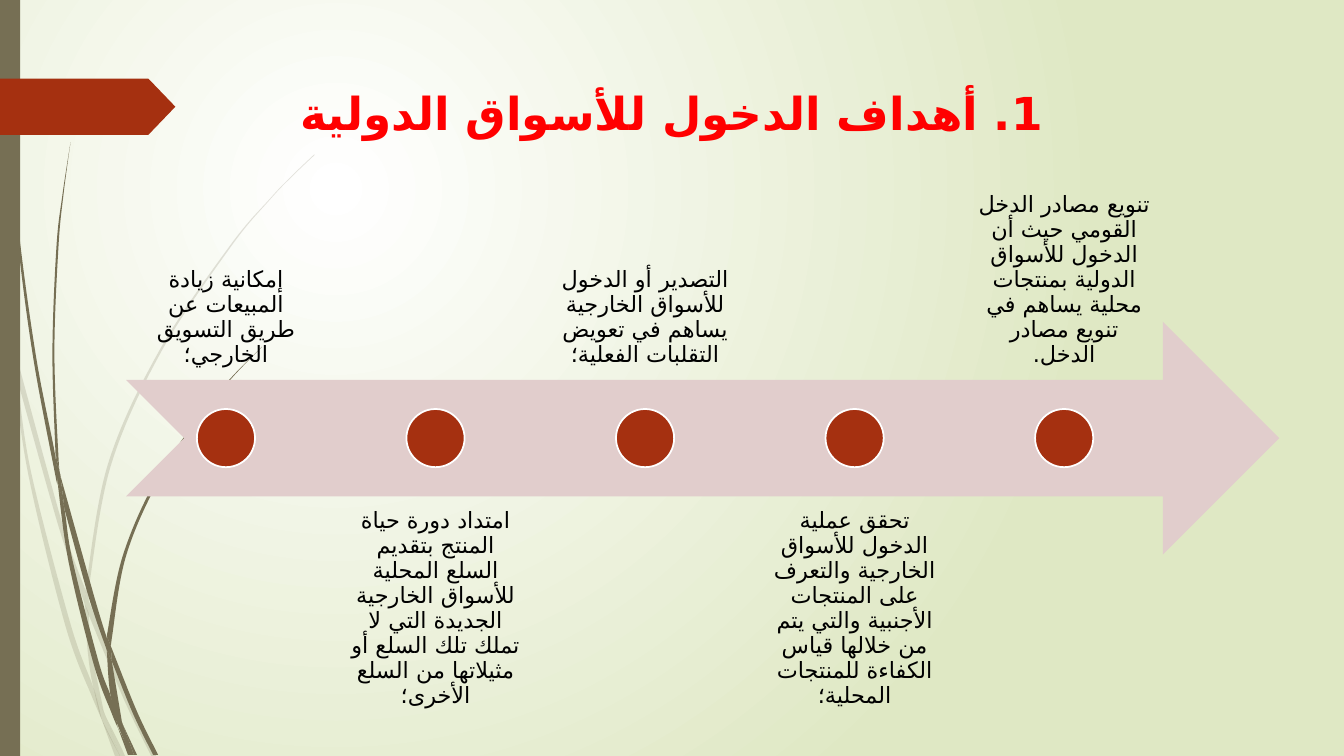
from lxml import etree
from pptx import Presentation
from pptx.dml.color import RGBColor
from pptx.enum.shapes import MSO_SHAPE as SHAPE
from pptx.enum.text import MSO_ANCHOR as ANCHOR, PP_ALIGN as ALIGN
from pptx.oxml.ns import qn
from pptx.util import Cm, Pt

OLIVE, RUST, PINK = "766F54", "A53010", "E1CDCC"
ARABIC_FONT = "DejaVu Sans"
STEM_UNIT = Cm(0.0254)

# Each stem is a closed outline of smooth edges, in stem units from the page corner.
PALE_STEMS = [
    [[(11, 350), (9, 322), (0, 282)], [(0, 299), (10, 344)]],
    [[(17, 376), (58, 522), (84, 599)], [(85, 586), (62, 520), (14, 345)]],
    [[(88, 596), (127, 692), (155, 750)], [(150, 750), (123, 694), (88, 610)]],
    [[(119, 750), (124, 750), (105, 711)]],
    [[(11, 350), (17, 376), (31, 469), (70, 619), (93, 683), (101, 714)],
     [(92, 693), (65, 621), (28, 470), (11, 350)]],
    [[(84, 599), (87, 646), (93, 683), (105, 711)], [(103, 706), (91, 646), (88, 608)]],
    [[(88, 584), (110, 462), (160, 349), (229, 245), (268, 198), (290, 175), (312, 154)],
     [(312, 153), (289, 175), (268, 197), (228, 244), (158, 348), (107, 461), (85, 584)],
     [(85, 586), (88, 596)]],
    [[(101, 714), (114, 750)], [(119, 750)]],
    [[(88, 610), (88, 596)], [(85, 586), (84, 599)]],
    [[(93, 683), (101, 714), (119, 750)], [(105, 711), (96, 692)]],
]
DARK_STEMS = [
    [[(3, 0), (4, 48), (7, 110), (17, 233), (33, 355), (56, 477)],
     [(57, 481), (55, 453), (36, 355), (19, 232), (8, 109), (5, 48), (4, 0)]],
    [[(64, 505), (88, 592), (106, 645)], [(106, 633), (93, 590), (60, 472)]],
    [[(110, 641), (136, 706), (157, 749)], [(152, 749), (132, 708), (111, 656)]],
    [[(57, 477), (64, 505), (72, 556), (98, 657), (110, 691), (116, 717)],
     [(117, 722), (111, 708), (93, 659), (68, 557), (57, 477)]],
    [[(70, 141), (63, 193), (58, 245), (54, 349), (58, 453), (60, 472)],
     [(55, 449), (52, 349), (56, 245), (62, 193), (70, 141)]],
    [[(122, 719), (133, 749)], [(136, 749)]],
    [[(57, 477), (64, 505)], [(60, 472), (55, 449)]],
    [[(111, 633), (125, 552), (158, 476), (205, 406), (231, 374), (260, 344)],
     [(260, 344), (231, 373), (204, 405), (156, 474), (122, 551), (106, 631)],
     [(110, 641)]],
    [[(117, 722), (127, 749)], [(131, 749)]],
    [[(106, 645), (110, 691), (122, 719)], [(121, 716), (111, 656)]],
    [[(106, 645), (111, 656)], [(110, 641), (106, 631)]],
    [[(110, 691), (116, 717), (130, 749)], [(133, 749), (122, 719), (116, 706)]],
]
GOALS = [
    "إمكانية زيادة المبيعات عن طريق التسويق الخارجي؛",
    "امتداد دورة حياة المنتج بتقديم السلع المحلية للأسواق الخارجية الجديدة "
    "التي لا تملك تلك السلع أو مثيلاتها من السلع الأخرى؛",
    "التصدير أو الدخول للأسواق الخارجية يساهم في تعويض التقلبات الفعلية؛",
    "تحقق عملية الدخول للأسواق الخارجية والتعرف على المنتجات الأجنبية "
    "والتي يتم من خلالها قياس الكفاءة للمنتجات المحلية؛",
    "تنويع مصادر الدخل القومي حيث أن الدخول للأسواق الدولية بمنتجات محلية "
    "يساهم في تنويع مصادر الدخل.",
]


def color(value):
    return RGBColor.from_string(value)


def paint(shape, fill, line=None, opacity=100):
    shape.shadow.inherit = False
    shape.fill.solid()
    shape.fill.fore_color.rgb = color(fill)
    if opacity < 100:
        tint = shape.fill._xPr.find(".//" + qn("a:srgbClr"))
        etree.SubElement(tint, qn("a:alpha"), val=str(opacity * 1000))
    if line:
        shape.line.color.rgb = color(line)
        shape.line.width = Pt(1.25)
    else:
        shape.line.fill.background()


def add_preset(page, kind, box, fill, line=None):
    shape = page.shapes.add_shape(kind, *(Cm(length) for length in box))
    paint(shape, fill, line)
    return shape


def add_rtl_text(page, box, text, size, ink, font, spacing, anchor=ANCHOR.TOP, inset=0.13):
    """Add a centred right-to-left paragraph in its own text box."""
    frame = page.shapes.add_textbox(*(Cm(length) for length in box)).text_frame
    frame.word_wrap = True
    frame.vertical_anchor = anchor
    frame.margin_left = frame.margin_right = Cm(inset)
    frame.margin_top = frame.margin_bottom = Cm(inset)
    para = frame.paragraphs[0]
    span = para.add_run()
    span.text = text
    para.alignment = ALIGN.CENTER
    para.line_spacing = spacing
    para._p.get_or_add_pPr().set("rtl", "1")
    span.font.size = Pt(size)
    span.font.name = font
    span.font.color.rgb = color(ink)
    etree.SubElement(span._r.get_or_add_rPr(), qn("a:cs"), typeface=ARABIC_FONT)
    return span


def curve_controls(edge):
    """Return the two Bezier controls of each segment of a smooth edge."""
    padded = [edge[0], *edge, edge[-1]]
    return [
        (tuple(b + (c - a) / 6 for a, b, c in zip(before, start, end)),
         tuple(c - (d - b) / 6 for b, c, d in zip(start, end, after)))
        for before, start, end, after in zip(padded, padded[1:], padded[2:], padded[3:])]


def add_stem(page, edges, opacity):
    points = [point for edge in edges for point in edge]
    left, top = (min(values) for values in zip(*points))
    builder = page.shapes.build_freeform(*points[0], scale=STEM_UNIT)
    builder.add_line_segments(points[1:], close=True)
    stem = builder.convert_to_shape()
    outline = stem._element.find(".//" + qn("a:path"))
    for attribute in ("w", "h"):
        outline.set(attribute, str(int(outline.get(attribute)) * 100))
    for spot in outline.iter(qn("a:pt")):
        for axis in ("x", "y"):
            spot.set(axis, str(int(spot.get(axis)) * 100))
    controls = []
    for edge in edges:
        controls += [None, *curve_controls(edge)]
    for line, pair in zip(outline.findall(qn("a:lnTo")), controls[1:]):
        if pair:
            line.tag = qn("a:cubicBezTo")
            for place, (x, y) in enumerate(pair):
                line.insert(place, etree.Element(
                    qn("a:pt"), x=str(round((x - left) * 100)), y=str(round((y - top) * 100))))
    paint(stem, OLIVE, opacity=opacity)


def set_background(page):
    fill = page.background.fill
    fill.gradient()
    for stop, (place, value) in zip(fill.gradient_stops, [(0, "FFFFFF"), (1, "DFE8C4")]):
        stop.position = place
        stop.color.rgb = color(value)
    gradient = page.background._cSld.find(".//" + qn("a:gradFill"))
    gradient.remove(gradient.find(qn("a:lin")))
    circle = etree.SubElement(gradient, qn("a:path"), path="circle")
    etree.SubElement(circle, qn("a:fillToRect"), l="50000", t="50000", r="100000", b="100000")


def add_decoration(page, height):
    for stems, opacity in ((PALE_STEMS, 20), (DARK_STEMS, 100)):
        for edges in stems:
            add_stem(page, edges, opacity)
    add_preset(page, SHAPE.RECTANGLE, (0, 0, 0.51, height), OLIVE)
    tag = add_preset(page, SHAPE.PENTAGON, (0, 1.98, 4.42, 1.42), RUST)
    tag.adjustments[0] = 0.48


def add_timeline(page, left, top, width, height):
    """Place an arrow with dots, and labels alternately above and below it."""
    band = 0.4 * height
    add_preset(page, SHAPE.NOTCHED_RIGHT_ARROW, (left, top + 0.3 * height, width, band), PINK)
    label_width = 0.9 * width / (1.05 * len(GOALS) - 0.05)
    dot = 0.1 * height
    for index, goal in enumerate(GOALS):
        x = left + index * 1.05 * label_width
        below = index % 2
        add_rtl_text(page, (x, top + below * (height - band), label_width, band), goal,
                     16, "000000", "TeX Gyre Adventor", 0.93,
                     ANCHOR.TOP if below else ANCHOR.BOTTOM, 0.3)
        add_preset(page, SHAPE.OVAL,
                   (x + (label_width - dot) / 2, top + (height - dot) / 2, dot, dot),
                   RUST, "FFFFFF")


def main():
    deck = Presentation()
    deck.slide_width, deck.slide_height = Cm(33.87), Cm(19.05)
    page = deck.slides.add_slide(deck.slide_layouts[6])
    set_background(page)
    add_decoration(page, 19.05)
    title = add_rtl_text(page, (3.18, 1.73, 27.5, 2.82), "1. أهداف الدخول للأسواق الدولية",
                         32.4, "FF0000", "Times New Roman", 1.2)
    title.font.bold = True
    add_timeline(page, 3.18, 3.71, 29.06, 14.66)
    deck.save("out.pptx")


if __name__ == "__main__":
    main()
